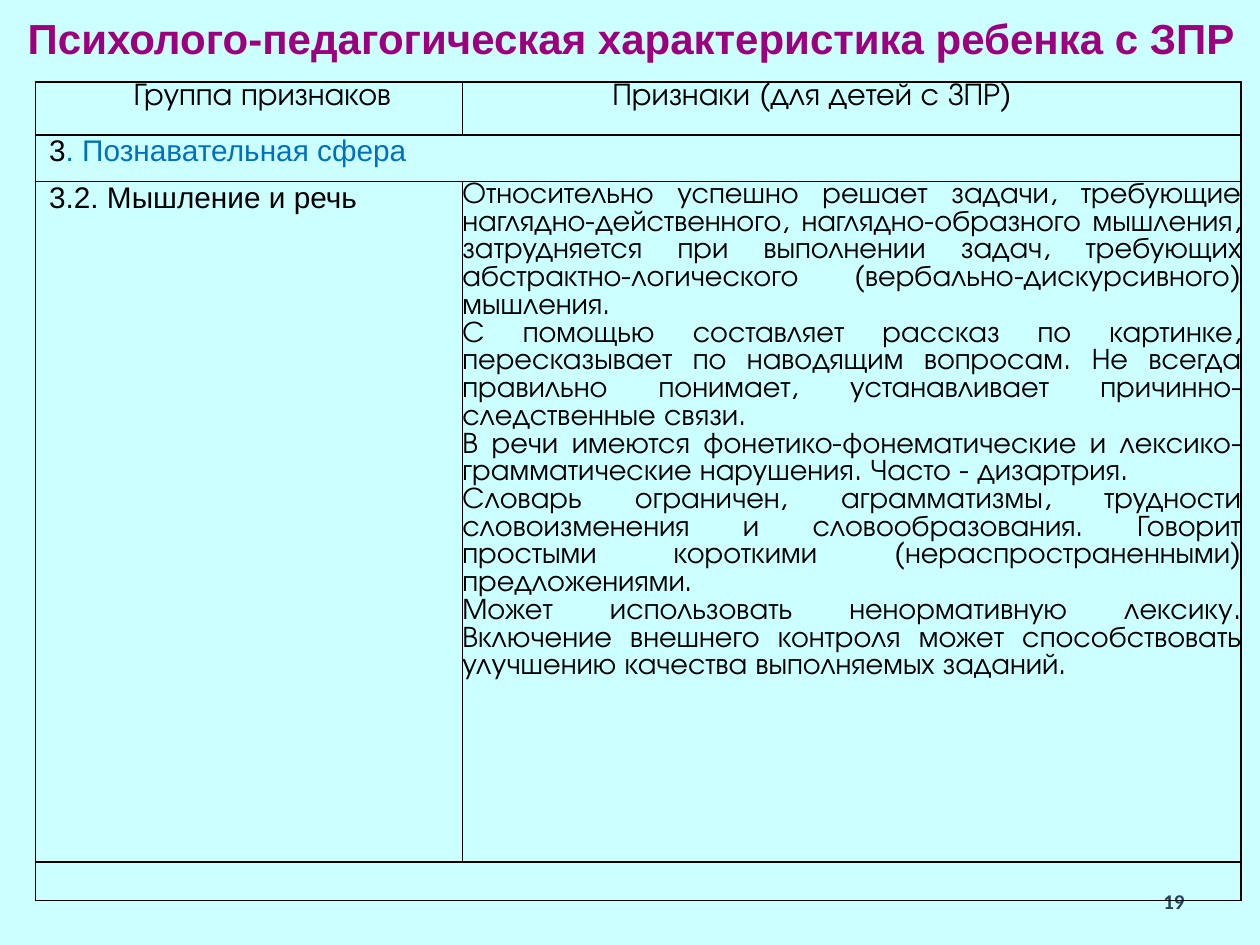
from pptx import Presentation
from pptx.dml.color import RGBColor
from pptx.enum.text import MSO_ANCHOR, MSO_AUTO_SIZE, PP_ALIGN
from pptx.oxml import parse_xml
from pptx.oxml.ns import nsdecls
from pptx.util import Inches, Pt

LEFT, RIGHT, JUSTIFY = PP_ALIGN.LEFT, PP_ALIGN.RIGHT, PP_ALIGN.JUSTIFY
TOP, MIDDLE = MSO_ANCHOR.TOP, MSO_ANCHOR.MIDDLE
NO_FIT = MSO_AUTO_SIZE.NONE
TITLE_ONLY = 5
GEOMETRIC, PLAIN, NUMBER = "TeX Gyre Adventor", "Arial", "Calibri"
BACKGROUND, PURPLE, BLACK, BLUE, NAVY = "CCFFFF", "9C007F", "000000", "0070C0", "254061"

COLUMNS = (3.39, 6.18)
ROWS = (0.42, 0.37, 5.4, 0.3)
HEADERS = (("Группа признаков", 0.78), ("Признаки (для детей с ЗПР)", 1.19))
SIGNS = (
    "Относительно успешно решает задачи, требующие наглядно-действенного, "
    "наглядно-образного мышления, затрудняется при выполнении задач, требующих "
    "абстрактно-логического (вербально-дискурсивного) мышления.",
    "С помощью составляет рассказ по картинке, пересказывает по наводящим вопросам. "
    "Не всегда правильно понимает, устанавливает причинно-следственные связи.",
    "В речи имеются фонетико-фонематические и лексико-грамматические нарушения. "
    "Часто - дизартрия.",
    "Словарь ограничен, аграмматизмы, трудности словоизменения и словообразования. "
    "Говорит простыми короткими (нераспространенными) предложениями.",
    "Может использовать ненормативную лексику. Включение внешнего контроля может "
    "способствовать улучшению качества выполняемых заданий.",
)


def rgb(value):
    return RGBColor.from_string(value)


def add_run(p, text, size, font, color=BLACK, bold=False):
    r = p.add_run()
    r.text = text
    for name, value in {"size": Pt(size), "name": font, "bold": bold}.items():
        setattr(r.font, name, value)
    r.font.color.rgb = rgb(color)


def set_frame(shape, box, anchor):
    for name, value in zip(("left", "top", "width", "height"), box):
        setattr(shape, name, Inches(value))
    tf = shape.text_frame
    tf.word_wrap, tf.auto_size, tf.vertical_anchor = True, NO_FIT, anchor
    return tf.paragraphs[0]


def set_cell(cell):
    """Clear the fill and margins and draw a thin black border on every side."""
    for side in ("left", "right", "top", "bottom"):
        setattr(cell, f"margin_{side}", 0)
    tc_pr = cell._tc.get_or_add_tcPr()
    for tag in ("lnL", "lnR", "lnT", "lnB"):
        tc_pr.append(parse_xml(
            f'<a:{tag} {nsdecls("a")} w="{Pt(1)}"><a:solidFill>'
            f'<a:srgbClr val="{BLACK}"/></a:solidFill></a:{tag}>'))
    cell.fill.background()


def indent(p, inches):
    p._p.get_or_add_pPr().set("marL", str(Inches(inches)))


def add_signs_table(s):
    table = s.shapes.add_table(len(ROWS), len(COLUMNS), Inches(0.28), Inches(0.65),
                               Inches(sum(COLUMNS)), Inches(sum(ROWS))).table
    table.first_row = table.horz_banding = False
    for column, width in zip(table.columns, COLUMNS):
        column.width = Inches(width)
    for row, height in zip(table.rows, ROWS):
        row.height = Inches(height)
    for cell in table.iter_cells():
        set_cell(cell)
    for row in (1, 3):
        table.cell(row, 0).merge(table.cell(row, 1))

    for col, (text, gap) in enumerate(HEADERS):
        p = table.cell(0, col).text_frame.paragraphs[0]
        indent(p, gap)
        add_run(p, text, 18, GEOMETRIC)
    groups = {1: (("3", BLACK), (". Познавательная сфера", BLUE)),
              2: (("3.2. Мышление и речь", BLACK),)}
    for row, parts in groups.items():
        p = table.cell(row, 0).text_frame.paragraphs[0]
        indent(p, 0.11)
        for text, color in parts:
            add_run(p, text, 17, PLAIN, color)
    tf = table.cell(2, 1).text_frame
    for i, text in enumerate(SIGNS):
        p = tf.add_paragraph() if i else tf.paragraphs[0]
        p.alignment = JUSTIFY
        add_run(p, text, 17, GEOMETRIC)


def main():
    prs = Presentation()
    prs.slide_width, prs.slide_height = Inches(10), Inches(7.5)
    s = prs.slides.add_slide(prs.slide_layouts[TITLE_ONLY])
    s.background.fill.solid()
    s.background.fill.fore_color.rgb = rgb(BACKGROUND)

    p = set_frame(s.shapes.title, (0.12, 0.05, 11.58, 0.5), TOP)
    p.alignment = LEFT
    add_run(p, "Психолого-педагогическая характеристика ребенка с ЗПР",
            24, PLAIN, PURPLE, True)
    number = s.shapes.add_textbox(0, 0, 0, 0)
    p = set_frame(number, (7.17, 6.95, 2.33, 0.4), MIDDLE)
    p.alignment = RIGHT
    add_run(p, "19", 12, NUMBER, NAVY, True)
    add_signs_table(s)
    prs.save("out.pptx")


if __name__ == "__main__":
    main()
